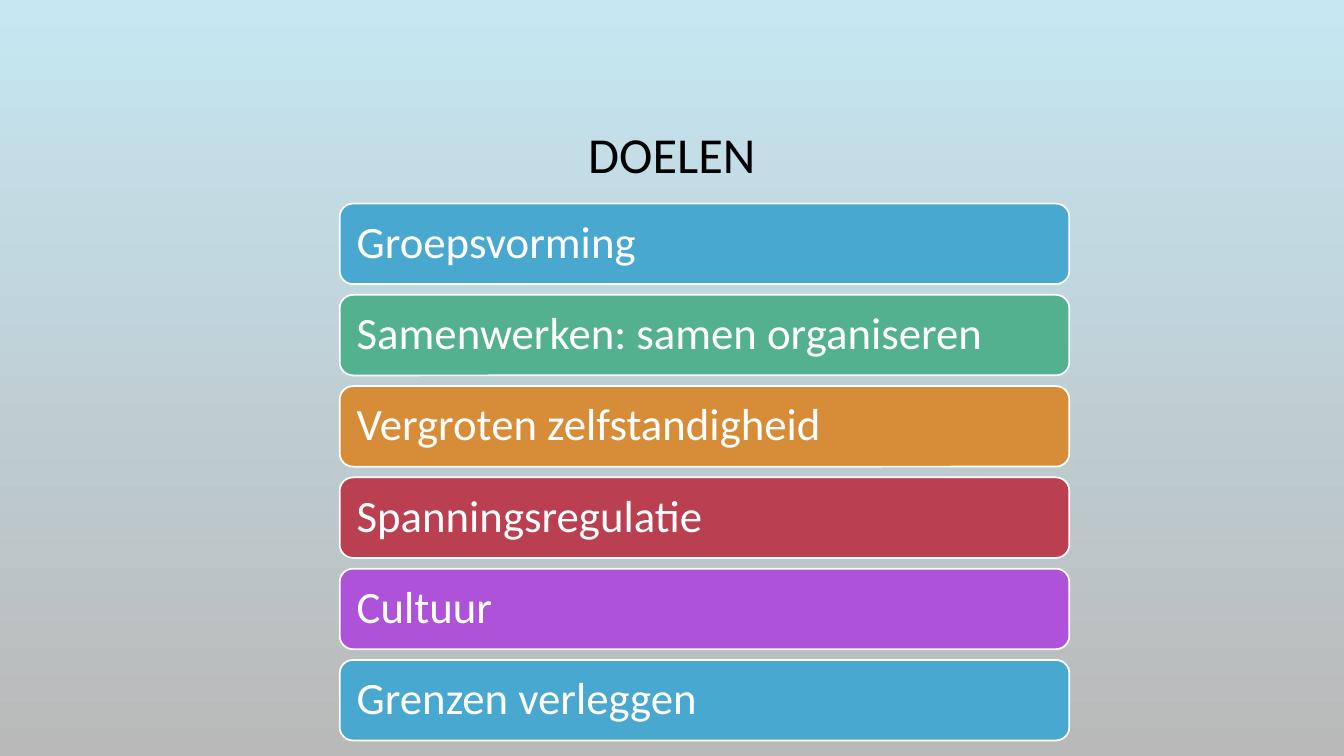
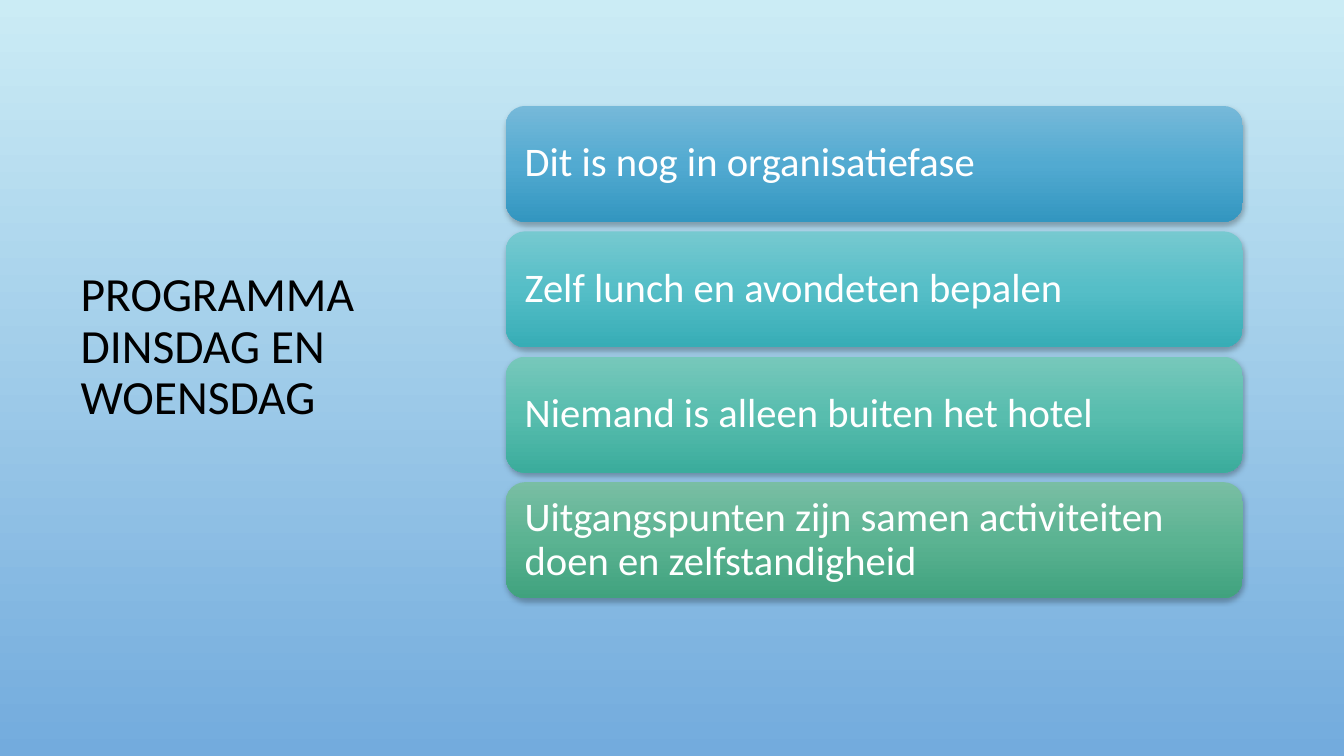
from copy import deepcopy

from lxml.etree import SubElement
from pptx import Presentation
from pptx.dml.color import RGBColor
from pptx.enum.shapes import MSO_SHAPE
from pptx.enum.text import MSO_ANCHOR, MSO_AUTO_SIZE, PP_ALIGN
from pptx.oxml.ns import qn
from pptx.util import Cm, Pt

FONT = "Calibri"
BLACK = RGBColor(0x00, 0x00, 0x00)
WHITE = RGBColor(0xFF, 0xFF, 0xFF)
BLUE = RGBColor(0x48, 0xA8, 0xD0)
GREEN = RGBColor(0x53, 0xB1, 0x8F)
ORANGE = RGBColor(0xD7, 0x8D, 0x38)
RED = RGBColor(0xBA, 0x3F, 0x51)
PURPLE = RGBColor(0xAE, 0x52, 0xD9)

SKY_TO_GREY = (RGBColor(0xC5, 0xE7, 0xF2), RGBColor(0xB9, 0xB9, 0xB9))
SKY_TO_BLUE = (RGBColor(0xCB, 0xEC, 0xF5), RGBColor(0x73, 0xAB, 0xDD))
BLUE_SHADES = (RGBColor(0x76, 0xB9, 0xD9), RGBColor(0x52, 0xAA, 0xD1), RGBColor(0x33, 0x96, 0xC0))
CYAN_SHADES = (RGBColor(0x76, 0xC9, 0xD0), RGBColor(0x55, 0xBE, 0xC7), RGBColor(0x37, 0xAD, 0xB6))
TEAL_SHADES = (RGBColor(0x77, 0xC8, 0xBB), RGBColor(0x58, 0xBD, 0xAE), RGBColor(0x3B, 0xAC, 0x9C))
GREEN_SHADES = (RGBColor(0x79, 0xBE, 0xA4), RGBColor(0x5B, 0xB3, 0x92), RGBColor(0x40, 0xA2, 0x7E))

GOALS = [
    ("Groepsvorming", BLUE),
    ("Samenwerken: samen organiseren", GREEN),
    ("Vergroten zelfstandigheid", ORANGE),
    ("Spanningsregulatie", RED),
    ("Cultuur", PURPLE),
    ("Grenzen verleggen", BLUE),
]
PROGRAMME = [
    ("Dit is nog in organisatiefase", BLUE_SHADES),
    ("Zelf lunch en avondeten bepalen", CYAN_SHADES),
    ("Niemand is alleen buiten het hotel", TEAL_SHADES),
    ("Uitgangspunten zijn samen activiteiten doen en zelfstandigheid", GREEN_SHADES),
]


def paint_gradient(fill, owner, colours):
    """Fill from top to bottom with evenly spaced colours; owner is the XML around the fill."""
    fill.gradient()
    fill.gradient_angle = 270
    stop_list = owner.find(".//" + qn("a:gsLst"))
    for _ in colours[2:]:
        stop_list.append(deepcopy(stop_list[0]))
    for index, (stop, colour) in enumerate(zip(fill.gradient_stops, colours)):
        stop.color.rgb = colour
        stop.position = index / (len(colours) - 1)


def add_soft_shadow(shape):
    effects = shape._element.spPr.find(qn("a:effectLst"))
    shadow = SubElement(effects, qn("a:outerShdw"), blurRad=str(Pt(4)), dist=str(Pt(2)),
                        dir="5400000", algn="ctr", rotWithShape="0")
    black = SubElement(shadow, qn("a:srgbClr"), val=str(BLACK))
    SubElement(black, qn("a:alpha"), val="28000")


def write(frame, text, size, colour, align):
    frame.text = text
    frame.word_wrap = True
    frame.auto_size = MSO_AUTO_SIZE.NONE
    frame.vertical_anchor = MSO_ANCHOR.MIDDLE
    paragraph = frame.paragraphs[0]
    paragraph.alignment = align
    paragraph.line_spacing = 0.9
    font = paragraph.runs[0].font
    font.name, font.size, font.color.rgb = FONT, Pt(size), colour


def add_titled_slide(deck, background, title, box, size, align):
    slide = deck.slides.add_slide(deck.slide_layouts[5])
    paint_gradient(slide.background.fill, slide.element, background)
    heading = slide.shapes.title
    heading.left, heading.top, heading.width, heading.height = map(Cm, box)
    write(heading.text_frame, title, size, BLACK, align)
    return slide


def add_bars(slide, items, box, bar_height, size):
    """Spread rounded bars over the box; one colour is flat with an outline, several are shaded."""
    left, top, width, height = box
    step = (height - bar_height) / (len(items) - 1)
    for index, (text, colour) in enumerate(items):
        bar = slide.shapes.add_shape(MSO_SHAPE.ROUNDED_RECTANGLE, Cm(left), Cm(top + index * step),
                                     Cm(width), Cm(bar_height))
        bar.shadow.inherit = False
        if isinstance(colour, RGBColor):
            bar.fill.solid()
            bar.fill.fore_color.rgb = colour
            bar.line.color.rgb = WHITE
            bar.line.width = Pt(1.25)
        else:
            paint_gradient(bar.fill, bar._element.spPr, colour)
            bar.line.fill.background()
            add_soft_shadow(bar)
        frame = bar.text_frame
        # The preset's own text area already starts slightly inside the corners.
        frame.margin_left = frame.margin_right = Cm(0.33)
        frame.margin_top = frame.margin_bottom = Cm(0.1)
        write(frame, text, size, WHITE, PP_ALIGN.LEFT)


def add_goals_slide(deck):
    slide = add_titled_slide(deck, SKY_TO_GREY, "DOELEN", (2.54, 1.73, 28.78, 4.45),
                             36, PP_ALIGN.CENTER)
    add_bars(slide, GOALS, (8.56, 5.13, 18.39, 13.53), 2.03, 32)


def add_programme_slide(deck):
    slide = add_titled_slide(deck, SKY_TO_BLUE, "PROGRAMMA DINSDAG EN WOENSDAG",
                             (1.78, 3.66, 7.9, 10.2), 34, PP_ALIGN.LEFT)
    add_bars(slide, PROGRAMME, (12.75, 2.67, 18.57, 12.4), 2.92, 29)


def main():
    deck = Presentation()
    deck.slide_width, deck.slide_height = Cm(33.87), Cm(19.05)
    add_goals_slide(deck)
    add_programme_slide(deck)
    deck.save("out.pptx")


if __name__ == "__main__":
    main()
